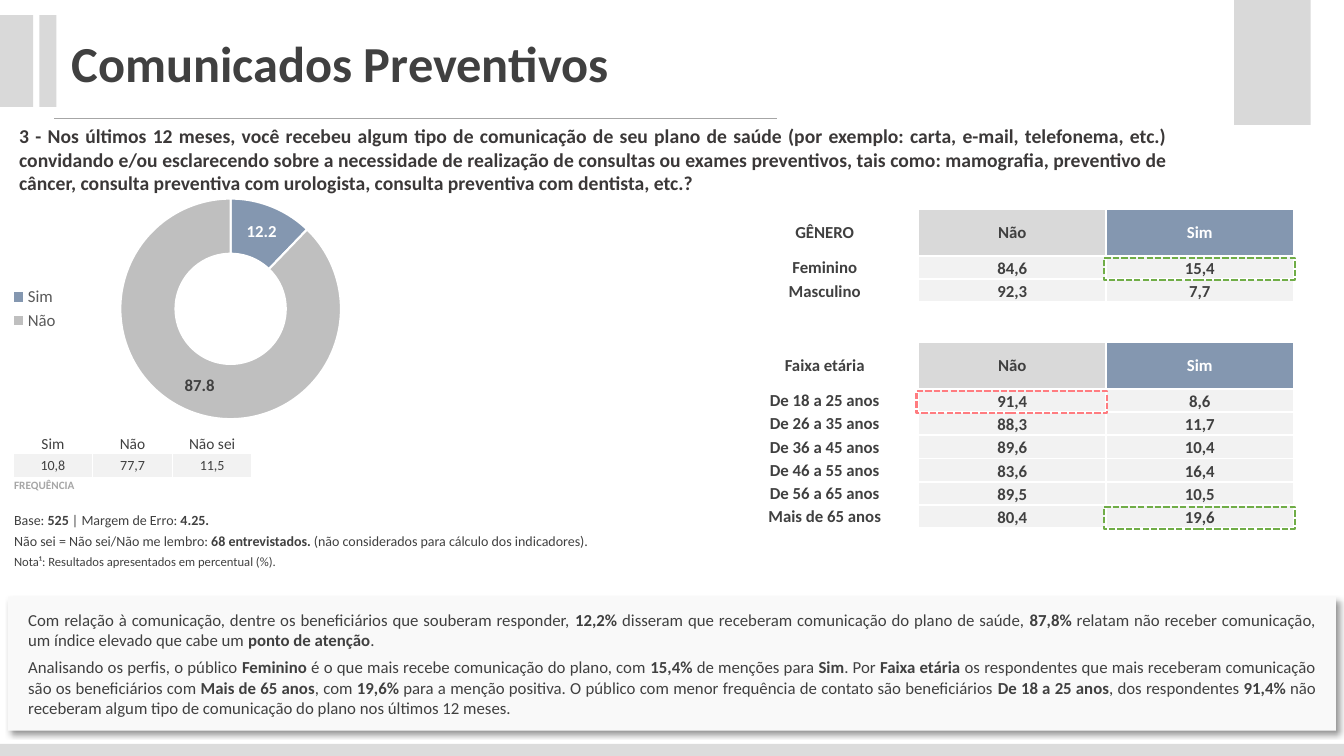
from pptx import Presentation
from pptx.chart.data import CategoryChartData
from pptx.dml.color import RGBColor
from pptx.enum.chart import XL_CHART_TYPE, XL_LEGEND_POSITION
from pptx.enum.dml import MSO_LINE
from pptx.enum.shapes import MSO_CONNECTOR, MSO_SHAPE
from pptx.enum.text import MSO_ANCHOR, PP_ALIGN
from pptx.oxml import parse_xml
from pptx.oxml.ns import nsdecls
from pptx.util import Inches, Pt

FONT = "Calibri"
RECT = MSO_SHAPE.RECTANGLE
DONUT = XL_CHART_TYPE.DOUGHNUT
LEFT, CENTER, JUSTIFY = PP_ALIGN.LEFT, PP_ALIGN.CENTER, PP_ALIGN.JUSTIFY
TOP, MIDDLE, BOTTOM = MSO_ANCHOR.TOP, MSO_ANCHOR.MIDDLE, MSO_ANCHOR.BOTTOM
DARK, GREY, PALE, BLUE, WHITE = "404040", "D9D9D9", "F2F2F2", "8497B0", "FFFFFF"
GREEN, RED = "70AD47", "FF7C80"

QUESTION = (
    "3 - Nos últimos 12 meses, você recebeu algum tipo de comunicação de seu plano de saúde "
    "(por exemplo: carta, e-mail, telefonema, etc.) convidando e/ou esclarecendo sobre a "
    "necessidade de realização de consultas ou exames preventivos, tais como: mamografia, "
    "preventivo de câncer, consulta preventiva com urologista, consulta preventiva com "
    "dentista, etc.?")
FINDINGS = [
    "Com relação à comunicação, dentre os beneficiários que souberam responder, **12,2%** "
    "disseram que receberam comunicação do plano de saúde, **87,8%** relatam não receber "
    "comunicação, um índice elevado que cabe um **ponto de atenção**.",
    "Analisando os perfis, o público** Feminino** é o que mais recebe comunicação do plano, "
    "com **15,4% **de menções para **Sim**. Por **Faixa etária **os respondentes que mais "
    "receberam comunicação são os beneficiários com **Mais de 65 anos**, com **19,6% **para a "
    "menção positiva. O público com menor frequência de contato são beneficiários "
    "**De 18 a 25 anos**, dos respondentes **91,4% **não receberam algum tipo de comunicação "
    "do plano nos últimos 12 meses."]
PROFILE = [
    ("GÊNERO", "Não", "Sim"),
    ("Feminino", "84,6", "15,4"),
    ("Masculino", "92,3", "7,7"),
    None,
    ("Faixa etária", "Não", "Sim"),
    ("De 18 a 25 anos", "91,4", "8,6"),
    ("De 26 a 35 anos", "88,3", "11,7"),
    ("De 36 a 45 anos", "89,6", "10,4"),
    ("De 46 a 55 anos", "83,6", "16,4"),
    ("De 56 a 65 anos", "89,5", "10,5"),
    ("Mais de 65 anos", "80,4", "19,6")]
MARKS = [(5, 1, RED), (10, 2, GREEN), (1, 2, GREEN)]
NOTES = [
    ("Base: **525** | Margem de Erro: **4.25.**", 10),
    ("Não sei = Não sei/Não me lembro: **68 entrevistados.** "
     "(não considerados para cálculo dos indicadores).", 10),
    ("Nota¹: Resultados apresentados em percentual (%).", 9)]


def rgb(code):
    return RGBColor.from_string(code)


def style(font, size, color=DARK, bold=None):
    font.name, font.size, font.bold = FONT, Pt(size), bold
    font.color.rgb = rgb(color)


def write(para, text, size, color=DARK, bold=None, align=LEFT):
    """Fill a paragraph; text between ** marks is bold."""
    for i, part in enumerate(text.split("**")):
        if part:
            run = para.add_run()
            run.text = part
            if i % 2:
                run.font.bold = True
    para.alignment = align
    style(para.font, size, color, bold)


def inset(frame, x, y):
    frame.margin_left = frame.margin_right = Inches(x)
    frame.margin_top = frame.margin_bottom = Inches(y)


def block(slide, box, fill=None):
    shape = slide.shapes.add_shape(RECT, *map(Inches, box))
    shape.shadow.inherit = False
    shape.line.fill.background()
    if fill:
        shape.fill.solid()
        shape.fill.fore_color.rgb = rgb(fill)
    else:
        shape.fill.background()
    return shape


def frame(slide):
    for box, fill in [((0, 7.38, 13.33, 0.12), "DCDCDC"), ((0, 0.15, 0.33, 0.91), GREY),
                      ((0.39, 0.15, 0.17, 0.91), GREY), ((12.24, 0, 0.76, 1.24), GREY)]:
        block(slide, box, fill)
    ends = map(Inches, (0.54, 1.17, 7.71, 1.17))
    rule = slide.shapes.add_connector(MSO_CONNECTOR.STRAIGHT, *ends)
    rule.line.color.rgb = rgb("A6A6A6")
    rule.line.width = Pt(0.5)
    rule._element.spPr.append(parse_xml(f"<a:effectLst {nsdecls('a')}/>"))


def heading(slide, box):
    title = slide.shapes.title
    title.left, title.top, title.width, title.height = map(Inches, box)
    title.text_frame.vertical_anchor = TOP
    write(title.text_frame.paragraphs[0], "Comunicados Preventivos", 36, bold=True)


def question(slide, box):
    text = slide.shapes.add_textbox(*map(Inches, box)).text_frame
    text.word_wrap = True
    inset(text, 0.11, 0.06)
    write(text.paragraphs[0], QUESTION, 14, "3B3838", True, JUSTIFY)


def grid(slide, x, y, cols, rows):
    box = map(Inches, (x, y, sum(cols), sum(rows)))
    table = slide.shapes.add_table(len(rows), len(cols), *box).table
    table.first_row = table.horz_banding = False
    for col, width in zip(table.columns, cols):
        col.width = Inches(width)
    for row, height in zip(table.rows, rows):
        row.height = Inches(height)
    return table


def paint(cell, fill=None, edge=None, anchor=TOP):
    cell.margin_left = cell.margin_right = cell.margin_top = Inches(0.01)
    cell.margin_bottom = 0
    cell.vertical_anchor = anchor
    if fill:
        cell.fill.solid()
        cell.fill.fore_color.rgb = rgb(fill)
    else:
        cell.fill.background()
    for i, side in enumerate("LRTB"):
        ink = (f'<a:solidFill><a:srgbClr val="{WHITE}"/></a:solidFill>' if edge
               else "<a:noFill/>")
        line = f'<a:ln{side} {nsdecls("a")} w="{Pt(edge or 0)}">{ink}</a:ln{side}>'
        cell._tc.get_or_add_tcPr().insert(i, parse_xml(line))


def profile(slide, x, y):
    wide = 1.86
    rows = [0.39 if row is None else 0.47 if row[1] == "Não" else 0.23 for row in PROFILE]
    table = grid(slide, x, y, [wide] * 3, rows)
    for r, row in enumerate(PROFILE):
        head = row and row[1] == "Não"
        for c in range(3):
            cell = table.cell(r, c)
            fill = (None, GREY, BLUE)[c] if head else PALE if row and c else None
            paint(cell, fill, 1.5, MIDDLE if head or not c else BOTTOM)
            if row:
                ink = WHITE if fill == BLUE else DARK
                write(cell.text_frame.paragraphs[0], row[c], 12, ink, True, CENTER)
        if not row:
            table.cell(r, 0).merge(table.cell(r, 2))
    for r, c, color in MARKS:
        left, top = x + c * wide - 0.02, y + sum(rows[:r]) + 0.02
        mark = block(slide, (left, top, 1.89, 0.22))
        mark.line.color.rgb = rgb(color)
        mark.line.width = Pt(1.5)
        mark.line.dash_style = MSO_LINE.SQUARE_DOT


def counts(slide, x, y):
    table = grid(slide, x, y, [0.79] * 3, [0.2, 0.24, 0.24])
    for c, pair in enumerate([("Sim", "10,8"), ("Não", "77,7"), ("Não sei", "11,5")]):
        looks = [(11, None, BOTTOM), (10, PALE, MIDDLE)]
        for r, (text, (size, fill, anchor)) in enumerate(zip(pair, looks)):
            paint(table.cell(r, c), fill, 1, anchor)
            write(table.cell(r, c).text_frame.paragraphs[0], text, size, align=CENTER)
        paint(table.cell(2, c), edge=1)
    foot = table.cell(2, 0)
    foot.merge(table.cell(2, 2))
    write(foot.text_frame.paragraphs[0], "FREQUÊNCIA", 8, "A6A6A6", True)


def notes(slide, x, y):
    table = grid(slide, x, y, [7.09], [0.21] * 3)
    for r, (text, size) in enumerate(NOTES):
        paint(table.cell(r, 0))
        write(table.cell(r, 0).text_frame.paragraphs[0], text, size)


def findings(slide, box):
    panel = block(slide, box, "F9F9F9")
    props = panel._element.spPr
    props.remove(props.find(f"{{{props.nsmap['a']}}}effectLst"))
    props.append(parse_xml(
        f'<a:effectLst {nsdecls("a")}><a:outerShdw blurRad="{Pt(4)}" dist="{Pt(3)}" '
        'dir="2700000" algn="tl" rotWithShape="0"><a:srgbClr val="000000">'
        '<a:alpha val="40000"/></a:srgbClr></a:outerShdw></a:effectLst>'))
    text = panel.text_frame
    text.word_wrap = True
    text.vertical_anchor = MIDDLE
    inset(text, 0.2, 0.04)
    for i, words in enumerate(FINDINGS):
        para = text.add_paragraph() if i else text.paragraphs[0]
        write(para, words, 12, align=JUSTIFY)
        if i:
            para.space_before = Pt(5)


def donut(slide, box):
    data = CategoryChartData(number_format="0.0")
    data.categories = ["Sim", "Não"]
    data.add_series("Series 1", (12.2, 87.8))
    chart = slide.shapes.add_chart(DONUT, *map(Inches, box), data).chart
    style(chart.font, 10, "000000")
    chart.has_title = False
    chart.has_legend = True
    chart.legend.position = XL_LEGEND_POSITION.LEFT
    chart.legend.include_in_layout = False
    style(chart.legend.font, 12, "595959")
    plot = chart.plots[0]
    plot.vary_by_categories = True
    plot.has_data_labels = True
    series = plot.series[0]
    for i, (fill, ink) in enumerate([(BLUE, WHITE), ("BFBFBF", DARK)]):
        point = series.points[i]
        point.format.fill.solid()
        point.format.fill.fore_color.rgb = rgb(fill)
        point.format.line.color.rgb = rgb(WHITE)
        point.format.line.width = Pt(1.5)
        style(point.data_label.font, 12, ink, True)
    for labels in (plot.data_labels, series.data_labels):
        labels.show_value, labels.show_percentage = True, False
        labels.number_format, labels.number_format_is_linked = "0.0", False
        style(labels.font, 12, WHITE, True)
    area = chart._chartSpace.chart.plotArea
    for old in area.findall(f"{{{area.nsmap['c']}}}layout"):
        area.remove(old)
    spots = "".join(f'<c:{k} val="{v}"/>' for k, v in [
        ("layoutTarget", "inner"), ("xMode", "edge"), ("yMode", "edge"),
        ("x", 0.3), ("y", 0.06), ("w", 0.55), ("h", 0.88)])
    area.insert(0, parse_xml(f"<c:layout {nsdecls('c')}><c:manualLayout>{spots}"
                             "</c:manualLayout></c:layout>"))


def main():
    deck = Presentation()
    deck.slide_width, deck.slide_height = Inches(13.33), Inches(7.5)
    slide = deck.slides.add_slide(deck.slide_layouts[5])
    frame(slide)
    heading(slide, (0.61, 0.27, 5.81, 0.71))
    question(slide, (0.08, 1.17, 11.61, 0.82))
    profile(slide, 7.25, 2.07)
    counts(slide, 0.13, 4.3)
    notes(slide, 0.13, 5.07)
    findings(slide, (0.08, 5.92, 13.17, 1.33))
    donut(slide, (0, 1.82, 3.98, 2.49))
    deck.save("out.pptx")


if __name__ == "__main__":
    main()
